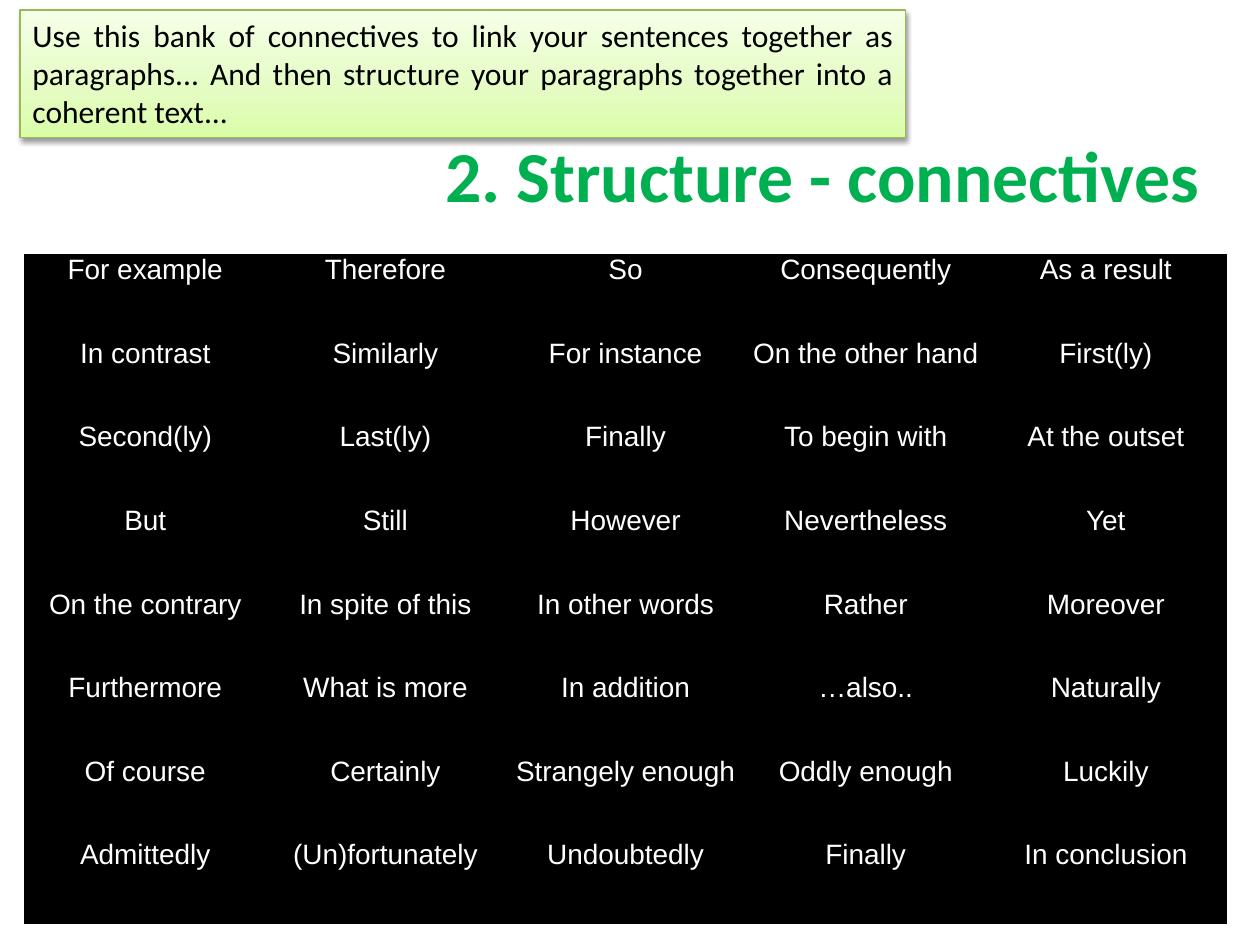
from copy import deepcopy

from lxml.etree import SubElement
from pptx import Presentation
from pptx.dml.color import RGBColor
from pptx.enum.shapes import MSO_SHAPE
from pptx.enum.text import MSO_ANCHOR, MSO_AUTO_SIZE, PP_ALIGN
from pptx.oxml import parse_xml
from pptx.oxml.ns import nsdecls, qn
from pptx.util import Inches, Pt

COLORS = {
    "black": "000000",
    "white": "FFFFFF",
    "title": "00B050",
    "note_line": "98B955",
}
NOTE_STOPS = [(0, "DAFDA7"), (35, "E4FCC2"), (100, "F5FFE7")]

NOTE = ("Use this bank of connectives to link your sentences together as "
        "paragraphs... And then structure your paragraphs together into a "
        "coherent text...")
CONNECTIVES = [
    ["For example", "Therefore", "So", "Consequently", "As a result"],
    ["In contrast", "Similarly", "For instance", "On the other hand", "First(ly)"],
    ["Second(ly)", "Last(ly)", "Finally", "To begin with", "At the outset"],
    ["But", "Still", "However", "Nevertheless", "Yet"],
    ["On the contrary", "In spite of this", "In other words", "Rather", "Moreover"],
    ["Furthermore", "What is more", "In addition", "…also..", "Naturally"],
    ["Of course", "Certainly", "Strangely enough", "Oddly enough", "Luckily"],
    ["Admittedly", "(Un)fortunately", "Undoubtedly", "Finally", "In conclusion"],
]


def rgb(name):
    return RGBColor.from_string(COLORS[name])


def add_text(tf, text, size, font, color, align, bold=False):
    p = tf.paragraphs[0]
    p.alignment = align
    r = p.add_run()
    r.text = text
    r.font.size = Pt(size)
    r.font.name = font
    r.font.bold = bold
    r.font.color.rgb = rgb(color)
    return p


def set_borders(cell, color, width):
    tc_pr = cell._tc.get_or_add_tcPr()
    # Border lines come before the fill in the cell properties
    for i, side in enumerate(("lnL", "lnR", "lnT", "lnB")):
        tc_pr.insert(i, parse_xml(
            f'<a:{side} {nsdecls("a")} w="{Pt(width)}"><a:solidFill>'
            f'<a:srgbClr val="{COLORS[color]}"/></a:solidFill></a:{side}>'))


def add_connectives_table(s):
    rows, cols = len(CONNECTIVES), len(CONNECTIVES[0])
    table = s.shapes.add_table(rows, cols, Inches(0.2), Inches(2.02),
                               Inches(9.53), Inches(5.31)).table
    table.first_row = False
    table.horz_banding = False
    for i, words in enumerate(CONNECTIVES):
        for j, word in enumerate(words):
            cell = table.cell(i, j)
            cell.margin_left = cell.margin_right = Inches(0.05)
            cell.margin_top = cell.margin_bottom = 0
            cell.fill.solid()
            cell.fill.fore_color.rgb = rgb("black")
            set_borders(cell, "black", 1)
            p = add_text(cell.text_frame, word, 16, "Arial", "white", PP_ALIGN.CENTER)
            p.space_before = p.space_after = Pt(14)


def set_gradient(fill, stops, angle):
    fill.gradient()
    fill.gradient_angle = angle
    first = fill.gradient_stops[0]._gs
    first.getparent().insert(1, deepcopy(first))
    for stop, (position, color) in zip(fill.gradient_stops, stops):
        stop.position = position / 100
        stop.color.rgb = RGBColor.from_string(color)


def add_drop_shadow(sp):
    sp.shadow.inherit = False
    effects = sp._element.spPr.find(qn("a:effectLst"))
    shadow = SubElement(effects, qn("a:outerShdw"), blurRad=str(Pt(3.1)),
                        dist=str(Pt(1.6)), dir="5400000", rotWithShape="0")
    color = SubElement(shadow, qn("a:srgbClr"), val=COLORS["black"])
    SubElement(color, qn("a:alpha"), val="38000")


def add_note(s):
    sp = s.shapes.add_shape(MSO_SHAPE.RECTANGLE, Inches(0.16), Inches(0.08),
                            Inches(7.03), Inches(1.01))
    set_gradient(sp.fill, NOTE_STOPS, 90)
    sp.line.color.rgb = rgb("note_line")
    sp.line.width = Pt(0.75)
    add_drop_shadow(sp)
    tf = sp.text_frame
    tf.word_wrap = True
    tf.auto_size = MSO_AUTO_SIZE.SHAPE_TO_FIT_TEXT
    tf.vertical_anchor = MSO_ANCHOR.TOP
    add_text(tf, NOTE, 18, "Calibri", "black", PP_ALIGN.JUSTIFY)


def set_title(s):
    title = s.shapes.title
    title.left, title.top = Inches(1.61), Inches(0.99)
    title.width, title.height = Inches(9.84), Inches(1.33)
    tf = title.text_frame
    tf.word_wrap = True
    tf.auto_size = MSO_AUTO_SIZE.NONE
    tf.vertical_anchor = MSO_ANCHOR.TOP
    add_text(tf, "2. Structure - connectives", 41, "Calibri", "title",
             PP_ALIGN.CENTER, bold=True)
    # Bring the title to the front
    s.shapes._spTree.append(title._element)


def main():
    prs = Presentation()
    prs.slide_width, prs.slide_height = Inches(10), Inches(7.5)
    s = prs.slides.add_slide(prs.slide_layouts[5])
    add_connectives_table(s)
    add_note(s)
    set_title(s)
    prs.save("out.pptx")


if __name__ == "__main__":
    main()
